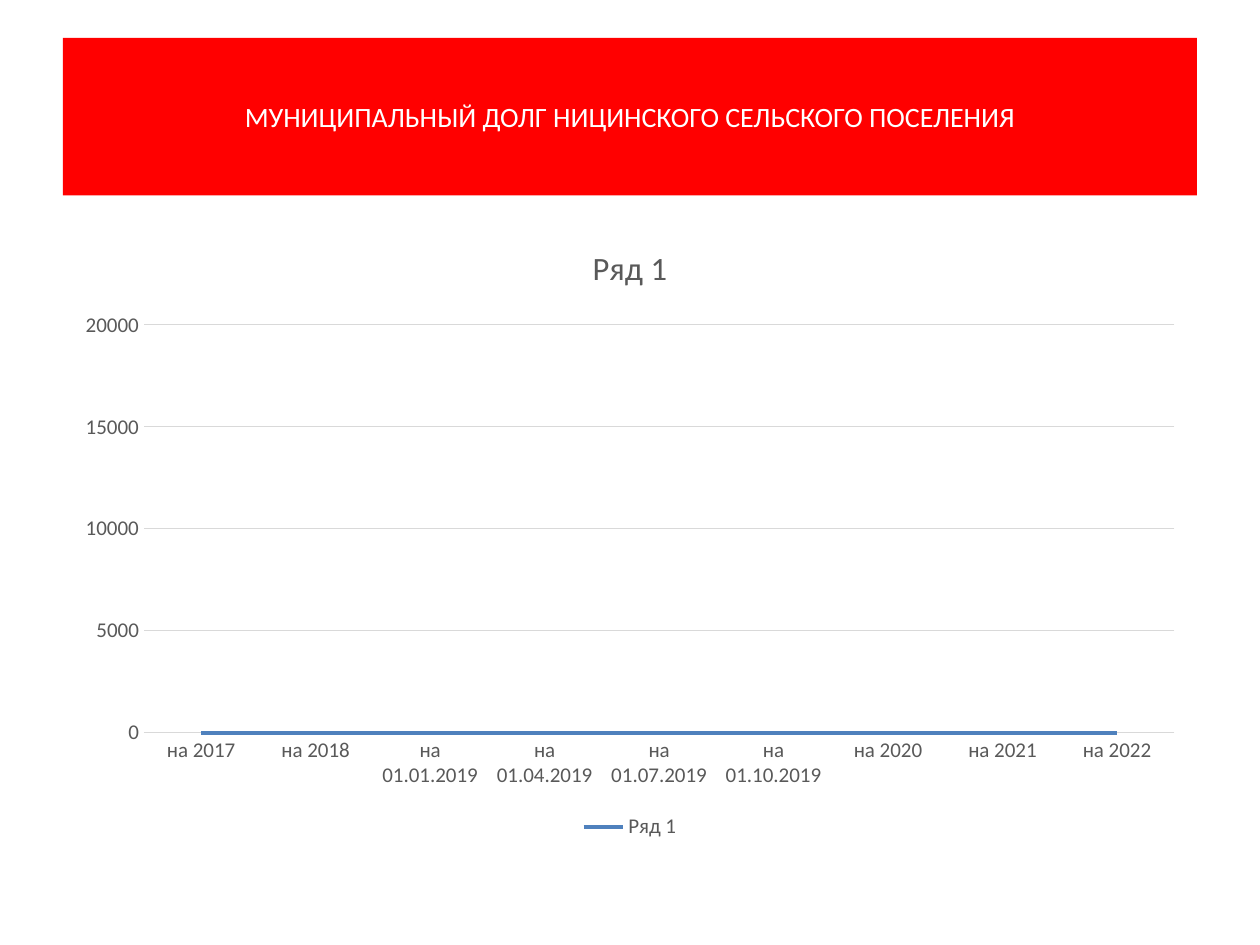
from pptx import Presentation
from pptx.chart.data import CategoryChartData
from pptx.dml.color import RGBColor
from pptx.enum.chart import (XL_CHART_TYPE, XL_LEGEND_POSITION as LEGEND_POS,
                             XL_MARKER_STYLE, XL_TICK_MARK as TICK)
from pptx.enum.shapes import MSO_SHAPE
from pptx.enum.text import MSO_ANCHOR, PP_ALIGN
from pptx.util import Pt

PX = 9144  # EMU per px, 100 px to the inch
FONT = "Calibri"
RED = RGBColor(0xFF, 0x00, 0x00)
WHITE = RGBColor(0xFF, 0xFF, 0xFF)
GREY = RGBColor(0x59, 0x59, 0x59)
LIGHT = RGBColor(0xD9, 0xD9, 0xD9)
BLUE = RGBColor(0x4F, 0x81, 0xBD)

SERIES = "Ряд 1"
DATES = ["2017", "2018", "01.01.2019", "01.04.2019", "01.07.2019",
         "01.10.2019", "2020", "2021", "2022"]


def px(*lengths):
    return [n * PX for n in lengths]


def set_font(font, size, color):
    font.name, font.size, font.bold = FONT, Pt(size), False
    font.color.rgb = color


def set_line(line, color, width):
    line.color.rgb, line.width = color, Pt(width)


def add_text(tf, text, size=12, color=GREY, align=PP_ALIGN.CENTER):
    p = tf.paragraphs[0]
    p.alignment = align
    r = p.add_run()
    r.text = text
    set_font(r.font, size, color)


def add_banner(s, box, text):
    sp = s.shapes.add_shape(MSO_SHAPE.RECTANGLE, *px(*box))
    sp.shadow.inherit = False
    sp.fill.solid()
    sp.fill.fore_color.rgb = RED
    sp.line.fill.background()
    tf = sp.text_frame
    tf.word_wrap = True
    tf.vertical_anchor = MSO_ANCHOR.MIDDLE
    add_text(tf, text, size=16, color=WHITE)


def add_debt_chart(s, box):
    data = CategoryChartData()
    data.categories = [f"на {date}" for date in DATES]
    data.add_series(SERIES, [0] * len(DATES))
    chart = s.shapes.add_chart(XL_CHART_TYPE.LINE, *px(*box), data).chart
    set_font(chart.font, 12, GREY)

    # Title and legend
    chart.has_title = True
    add_text(chart.chart_title.text_frame, SERIES, size=18.6)
    chart.chart_title.include_in_layout = False
    chart.has_legend = True
    chart.legend.position = LEGEND_POS.BOTTOM
    chart.legend.include_in_layout = False
    set_font(chart.legend.font, 12, GREY)

    # Axes
    cat, val = chart.category_axis, chart.value_axis
    for axis in (cat, val):
        axis.major_tick_mark = axis.minor_tick_mark = TICK.NONE
        set_font(axis.tick_labels.font, 12, GREY)
    set_line(cat.format.line, LIGHT, 0.75)
    val.format.line.fill.background()
    val.minimum_scale, val.maximum_scale, val.major_unit = 0, 20000, 5000
    set_line(val.major_gridlines.format.line, LIGHT, 0.75)

    # Debt line
    plot = chart.plots[0]
    plot.vary_by_categories = False
    line = plot.series[0]
    line.smooth = False
    line.marker.style = XL_MARKER_STYLE.NONE
    set_line(line.format.line, BLUE, 2.25)


def main():
    prs = Presentation()
    prs.slide_width, prs.slide_height = px(1000, 750)
    s = prs.slides.add_slide(prs.slide_layouts[6])
    add_banner(s, (50, 30, 900, 125),
               "МУНИЦИПАЛЬНЫЙ ДОЛГ НИЦИНСКОГО СЕЛЬСКОГО ПОСЕЛЕНИЯ")
    add_debt_chart(s, (50, 175, 900, 495))
    prs.save("out.pptx")


if __name__ == "__main__":
    main()
